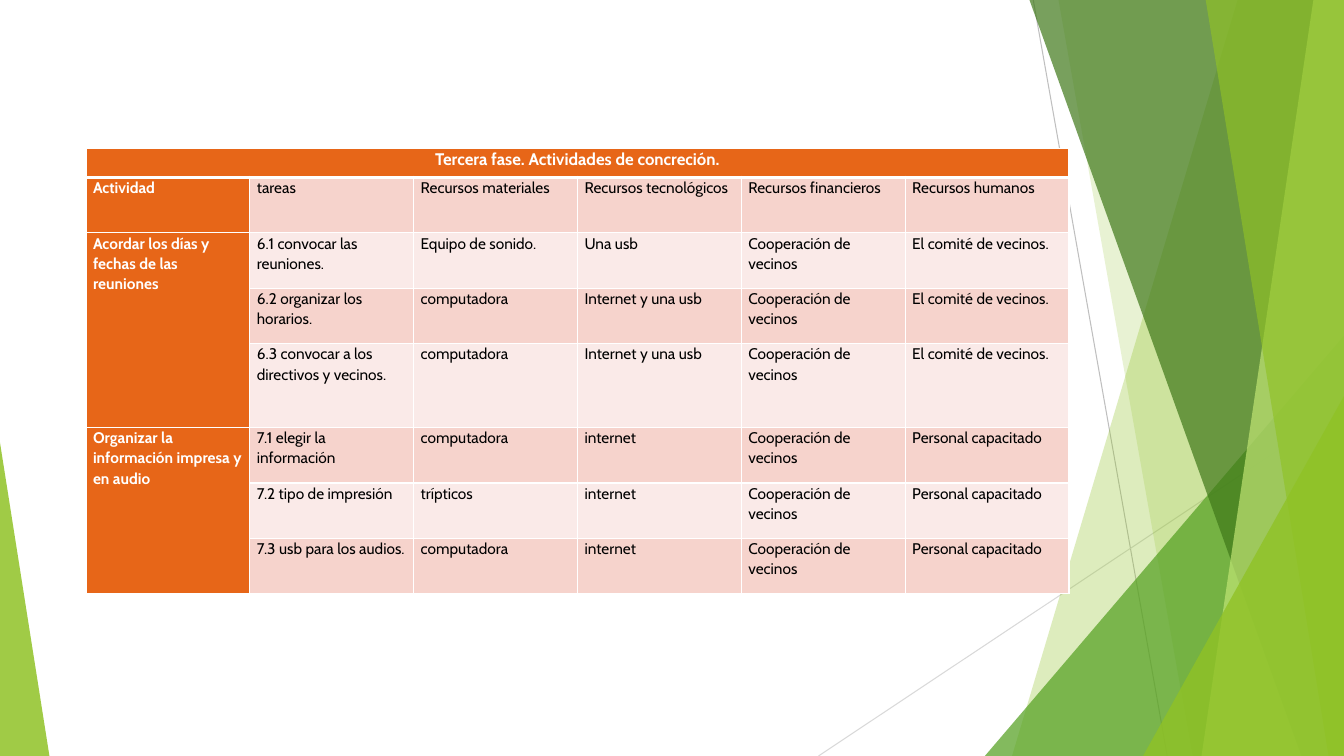
"""Build a slide with a task table over green facets."""
from pptx import Presentation
from pptx.dml.color import RGBColor as Rgb
from pptx.enum.shapes import MSO_CONNECTOR as Line, MSO_SHAPE as Shape
from pptx.enum.text import PP_ALIGN as Align
from pptx.oxml.ns import qn
from pptx.util import Inches, Pt
from lxml.etree import SubElement as Sub

WIDE, HIGH = Inches(13.33), Inches(7.5)
WHITE, BLACK = Rgb(255, 255, 255), Rgb(0, 0, 0)
ORANGE = Rgb(0xE7, 0x66, 0x18)
ROSE, BLUSH = Rgb(0xF6, 0xD3, 0xCC), Rgb(0xFA, 0xEA, 0xE8)
LIME, GREEN = Rgb(0x90, 0xC2, 0x26), Rgb(0x54, 0xA0, 0x21)
FOREST, PALE = Rgb(0x3F, 0x78, 0x19), Rgb(0xC0, 0xE4, 0x74)
GREY, SILVER = Rgb(0xBF, 0xBF, 0xBF), Rgb(0xD9, 0xD9, 0xD9)

FUNDS = "Cooperación de vecinos"
BOARD, STAFF = "El comité de vecinos.", "Personal capacitado"
TITLE = "Tercera fase. Actividades de concreción."
ROWS = [
    [TITLE],
    ["Actividad", "tareas", "Recursos materiales", "Recursos tecnológicos",
     "Recursos financieros", "Recursos humanos"],
    ["Acordar los días y fechas de las reuniones",
     "6.1 convocar las reuniones.", "Equipo de sonido.", "Una usb", FUNDS, BOARD],
    ["", "6.2 organizar los horarios.", "computadora", "Internet y una usb",
     FUNDS, BOARD],
    ["", "6.3 convocar a los directivos y vecinos.", "computadora",
     "Internet y una usb", FUNDS, BOARD],
    ["Organizar la información impresa y en audio",
     "7.1 elegir la información", "computadora", "internet", FUNDS, STAFF],
    ["", "7.2 tipo de impresión", "trípticos", "internet", FUNDS, STAFF],
    ["", "7.3 usb para los audios.", "computadora", "internet", FUNDS, STAFF],
]
COLS = 6
TALLS = [3.87, 7.33, 7.33, 7.33, 11.1, 7.33, 7.33, 7.33]


def across(share):
    """Turn a percentage of the slide's width into a length."""
    return round(WIDE * share / 100)


def down(share):
    """Turn a percentage of the slide's height into a length."""
    return round(HIGH * share / 100)


def tint(shape, color, share):
    """Fill a shape with a see-through colour and no outline."""
    shape.shadow.inherit = False
    shape.line.fill.background()
    shape.fill.solid()
    shape.fill.fore_color.rgb = color
    tone = shape.fill._xPr.find(qn("a:solidFill"))[0]
    Sub(tone, qn("a:alpha"), val=str(share * 1000))


def facet(slide, top, base, color, share):
    """Draw a slanted band that reaches the right edge."""
    pen = slide.shapes.build_freeform(across(top), down(-0.1))
    pen.add_line_segments([(across(100), down(-0.1)), (across(100), down(100)),
                           (across(base), down(100))], close=True)
    tint(pen.convert_to_shape(), color, share)


def wedge(slide, left, top, width, peak, color, share):
    """Draw a right triangle that stands on the bottom edge."""
    shape = slide.shapes.add_shape(Shape.ISOSCELES_TRIANGLE, across(left),
                                   down(top), across(width), down(100 - top))
    shape.adjustments[0] = peak
    tint(shape, color, share)


def ray(slide, start, end, color):
    """Draw a thin straight line between two points."""
    line = slide.shapes.add_connector(Line.STRAIGHT, across(start[0]),
                                      down(start[1]), across(end[0]), down(end[1]))
    line.line.color.rgb = color
    line.line.width = Pt(0.75)
    Sub(line._element.spPr, qn("a:effectLst"))


def edge(cell, side, width):
    """Give one side of a cell a white border."""
    rule = Sub(cell._tc.get_or_add_tcPr(), qn("a:" + side), w=str(Pt(width)))
    Sub(Sub(rule, qn("a:solidFill")), qn("a:srgbClr"), val=str(WHITE))


def write(cell, text, size, color, bold, align):
    """Set a cell's text and its format."""
    cell.margin_left = cell.margin_right = Inches(0.07)
    cell.margin_top = cell.margin_bottom = 0
    cell.text_frame.text = text
    para = cell.text_frame.paragraphs[0]
    para.alignment, para.line_spacing = align, 1.07
    for run in para.runs:
        run.font.name, run.font.size = "Cabin", Pt(size)
        run.font.bold, run.font.color.rgb = bold, color


def paint(cell, row, col):
    """Set a cell's borders and its banded fill."""
    edge(cell, "lnL", 1)
    edge(cell, "lnR", 1)
    edge(cell, "lnT", 3 if row == 1 else 1)
    edge(cell, "lnB", 3 if row == 0 else 1)
    cell.fill.solid()
    band = ROSE if row % 2 else BLUSH
    cell.fill.fore_color.rgb = ORANGE if row == 0 or col == 0 else band


def plan(slide):
    """Add the table of tasks and resources."""
    frame = slide.shapes.add_table(len(ROWS), COLS, across(6.4), down(19.6),
                                   across(12.19 * COLS), down(sum(TALLS)))
    table = frame.table
    for col in table.columns:
        col.width = across(12.19)
    for row, tall in zip(table.rows, TALLS):
        row.height = down(tall)
    for row, texts in enumerate(ROWS):
        for col in range(COLS):
            paint(table.cell(row, col), row, col)
        for col, text in enumerate(texts):
            head = row == 0 or col == 0
            write(table.cell(row, col), text, 11 if row else 12,
                  WHITE if head else BLACK, head,
                  Align.LEFT if row else Align.CENTER)
    table.cell(0, 0).merge(table.cell(0, COLS - 1))
    for row in (2, 5):
        table.cell(row, 0).merge(table.cell(row + 2, 0))


def main():
    """Build and save the slide."""
    deck = Presentation()
    deck.slide_width, deck.slide_height = WIDE, HIGH
    slide = deck.slides.add_slide(deck.slide_layouts[6])
    ray(slide, (76.88, 0), (86.85, 100), GREY)
    ray(slide, (100, 53.73), (60.9, 100), SILVER)
    facet(slide, 92.1, 75.3, LIME, 30)
    facet(slide, 78.75, 88.73, LIME, 20)
    wedge(slide, 73.28, 44.4, 26.72, 1, GREEN, 72)
    facet(slide, 76.58, 96.83, FOREST, 70)
    facet(slide, 97.73, 89.4, PALE, 70)
    facet(slide, 89.7, 98.85, LIME, 65)
    wedge(slide, 85.05, 52.4, 14.95, 1, LIME, 80)
    wedge(slide, 0, 58.53, 3.68, 0, LIME, 85)
    plan(slide)
    deck.save("out.pptx")


if __name__ == "__main__":
    main()
